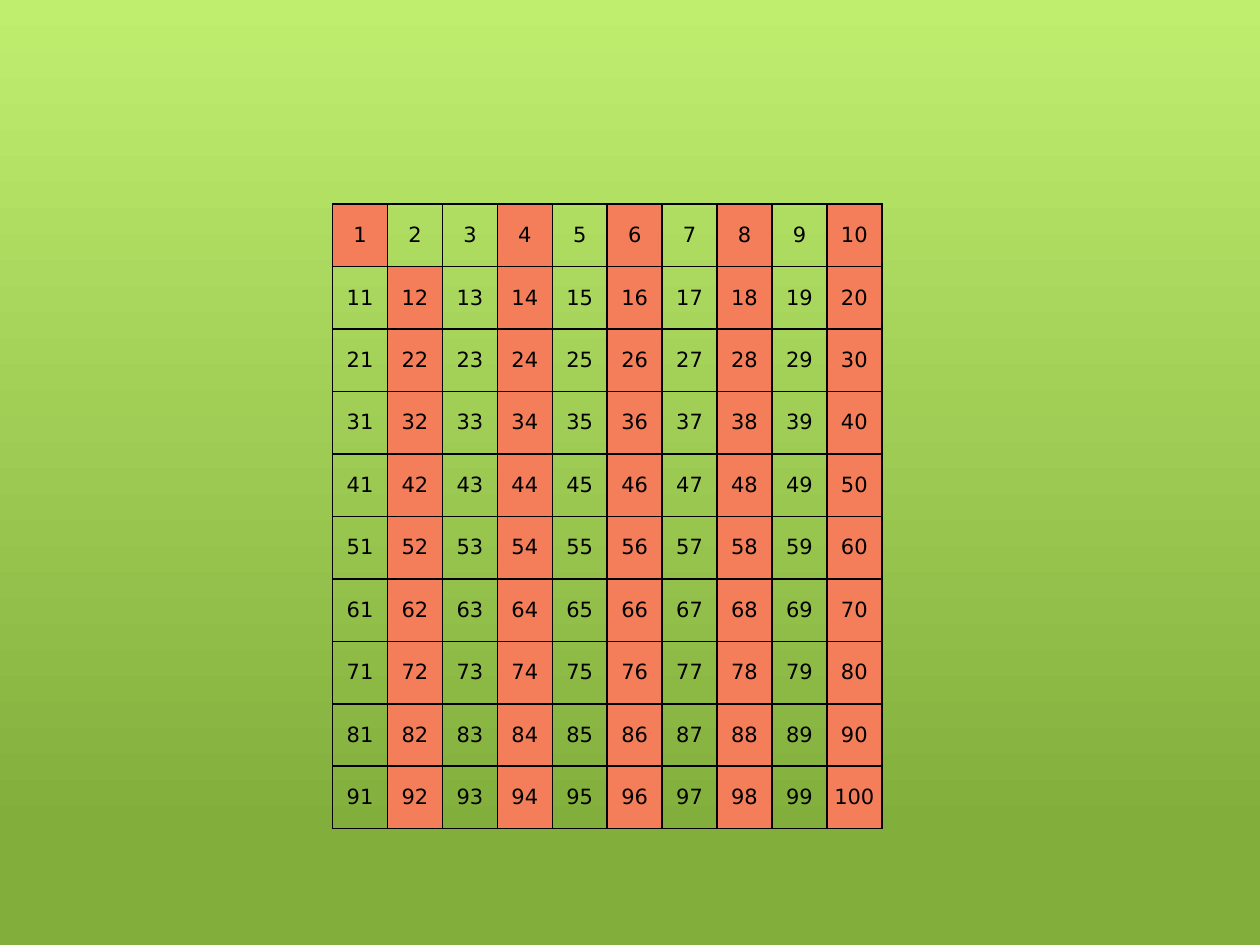
from lxml import etree
from pptx import Presentation
from pptx.dml.color import RGBColor
from pptx.enum.text import MSO_ANCHOR, PP_ALIGN
from pptx.oxml.ns import qn
from pptx.util import Inches, Pt

MIDDLE = MSO_ANCHOR.MIDDLE
CENTER = PP_ALIGN.CENTER
BLANK_LAYOUT = 6
SIDE = 10  # numbers per row and rows in the grid
FONT = "DejaVu Sans"
BLACK, CROSSED_OUT = "000000", "F47E5A"
LIGHT_GREEN, DARK_GREEN = "BFEE6F", "82AE3C"


def color(value):
    return RGBColor.from_string(value)


def paint_background(slide, stops):
    """Fill the slide with a gradient running from top to bottom."""
    fill = slide.background.fill
    fill.gradient()
    fill.gradient_angle = 270
    for stop, (position, tint) in zip(fill.gradient_stops, stops):
        stop.position = position
        stop.color.rgb = color(tint)


def write(frame, text, size=12, font=FONT, tint=BLACK, align=CENTER):
    paragraph = frame.paragraphs[0]
    paragraph.alignment = align
    run = paragraph.add_run()
    run.text = text
    run.font.size = Pt(size)
    run.font.name = font
    run.font.color.rgb = color(tint)


def outline(cell, tint=BLACK, width=1):
    """Draw all four borders; they must come before the cell's fill."""
    properties = cell._tc.get_or_add_tcPr()
    for position, side in enumerate(("a:lnL", "a:lnR", "a:lnT", "a:lnB")):
        line = etree.Element(qn(side), w=str(Pt(width)))
        solid = etree.SubElement(line, qn("a:solidFill"))
        etree.SubElement(solid, qn("a:srgbClr"), val=tint)
        properties.insert(position, line)


def is_crossed_out(number):
    """One, and every even number after two."""
    return number == 1 or (number > 2 and number % 2 == 0)


def add_number_grid(slide, left, top, width, height):
    table = slide.shapes.add_table(SIDE, SIDE, left, top, width, height).table
    table.first_row = table.horz_banding = False
    for column in table.columns:
        column.width = width // SIDE
    for row in table.rows:
        row.height = height // SIDE

    for number, cell in enumerate(table.iter_cells(), start=1):
        cell.vertical_anchor = MIDDLE
        cell.margin_left = cell.margin_right = Inches(0.04)
        if is_crossed_out(number):
            cell.fill.solid()
            cell.fill.fore_color.rgb = color(CROSSED_OUT)
        else:
            cell.fill.background()
        outline(cell)
        write(cell.text_frame, str(number))


def main():
    deck = Presentation()
    deck.slide_width, deck.slide_height = Inches(10), Inches(7.5)
    slide = deck.slides.add_slide(deck.slide_layouts[BLANK_LAYOUT])

    # Backdrop
    paint_background(slide, [(0, LIGHT_GREEN), (0.88, DARK_GREEN)])

    # Hundred grid
    add_number_grid(slide, Inches(2.64), Inches(1.62), Inches(4.36), Inches(4.96))

    deck.save("out.pptx")


if __name__ == "__main__":
    main()
